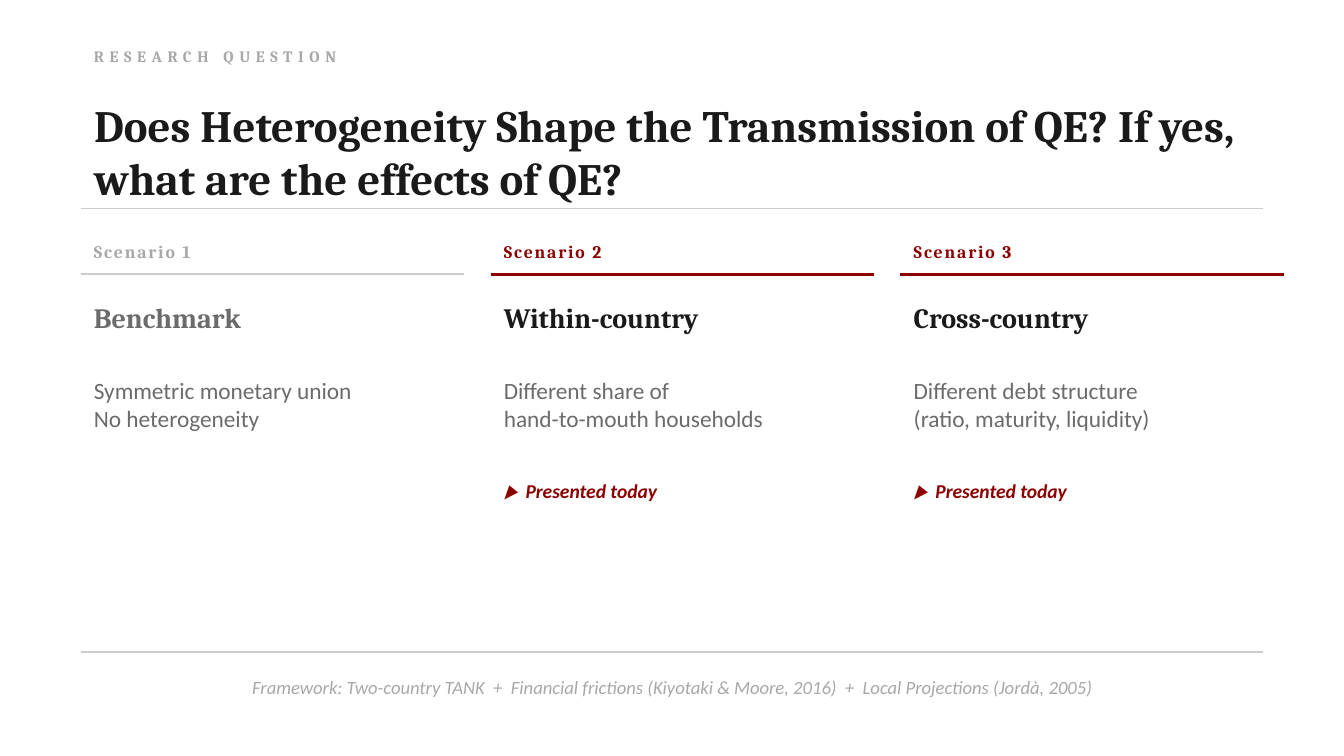
"""Build the research question slide with three scenario columns."""
from dataclasses import dataclass
from typing import Optional

from lxml.etree import SubElement
from pptx import Presentation
from pptx.dml.color import RGBColor
from pptx.enum.shapes import MSO_CONNECTOR as Conn
from pptx.enum.text import MSO_ANCHOR as Anchor, MSO_AUTO_SIZE as AutoSize, PP_ALIGN as Align
from pptx.oxml.ns import qn
from pptx.util import Emu, Pt

PX = 4572
INK = RGBColor(0x1A, 0x1A, 0x1A)
GREY = RGBColor(0x6B, 0x6B, 0x6B)
PALE = RGBColor(0xA8, 0xA8, 0xA8)
RULE = RGBColor(0xCC, 0xCC, 0xCC)
RED = RGBColor(0x8B, 0x00, 0x00)

LEFT, RIGHT = 120, 1880
COL_W, COL_STEP = 570, 610


@dataclass(frozen=True)
class Style:
    """Character format of a text."""
    font: str
    size: float
    color: RGBColor
    bold: bool = False
    italic: bool = False
    spacing: int = 0
    align: Align = Align.LEFT


@dataclass(frozen=True)
class Scenario:
    """One column of the comparison."""
    label: str
    name: str
    lines: tuple[str, ...]
    accent: RGBColor
    name_color: RGBColor
    rule_color: RGBColor
    rule_width: float
    note: Optional[str] = None


SCENARIOS = (
    Scenario("Scenario 1", "Benchmark", ("Symmetric monetary union", "No heterogeneity"),
             PALE, GREY, RULE, 0.75),
    Scenario("Scenario 2", "Within-country", ("Different share of", "hand-to-mouth households"),
             RED, INK, RED, 1.5, "▶  Presented today"),
    Scenario("Scenario 3", "Cross-country", ("Different debt structure", "(ratio, maturity, liquidity)"),
             RED, INK, RED, 1.5, "▶  Presented today"),
)


def px(n: int) -> Emu:
    """Turn px into EMU."""
    return Emu(n * PX)


def fill_text(sp, lines: tuple[str, ...], style: Style) -> None:
    """Write the lines into a shape, one paragraph each."""
    tf = sp.text_frame
    frame = {"word_wrap": True, "auto_size": AutoSize.NONE, "vertical_anchor": Anchor.MIDDLE}
    for key, value in frame.items():
        setattr(tf, key, value)
    font = {"name": style.font, "size": Pt(style.size), "bold": style.bold, "italic": style.italic}
    for i, line in enumerate(lines):
        p = tf.add_paragraph() if i else tf.paragraphs[0]
        p.alignment = style.align
        r = p.add_run()
        r.text = line
        for key, value in font.items():
            setattr(r.font, key, value)
        r.font.color.rgb = style.color
        if style.spacing:
            r._r.get_or_add_rPr().set("spc", str(style.spacing * 100))


def add_text(s, x: int, y: int, w: int, h: int, lines: tuple[str, ...], style: Style) -> None:
    """Add a text box."""
    fill_text(s.shapes.add_textbox(px(x), px(y), px(w), px(h)), lines, style)


def add_rule(s, x1: int, x2: int, y: int, color: RGBColor = RULE, width: float = 0.75) -> None:
    """Add a horizontal line without a shadow."""
    line = s.shapes.add_connector(Conn.STRAIGHT, px(x1), px(y), px(x2), px(y))
    line.line.color.rgb = color
    line.line.width = Pt(width)
    SubElement(line._element.spPr, qn("a:effectLst"))


def add_title(s, text: str) -> None:
    """Place and format the title placeholder."""
    sp = s.shapes.title
    box = {"left": LEFT, "top": 90, "width": RIGHT - LEFT, "height": 270}
    for key, value in box.items():
        setattr(sp, key, px(value))
    fill_text(sp, (text,), Style("Cambria", 24, INK, bold=True))


def add_scenario(s, x: int, sc: Scenario) -> None:
    """Draw one scenario column."""
    add_text(s, x, 344, COL_W, 60, (sc.label,), Style("Cambria", 9.5, sc.accent, bold=True, spacing=1))
    add_rule(s, x, x + COL_W, 408, sc.rule_color, sc.rule_width)
    add_text(s, x, 430, COL_W, 84, (sc.name,), Style("Cambria", 15, sc.name_color, bold=True))
    add_text(s, x, 530, COL_W, 144, sc.lines, Style("Calibri", 12.5, GREY))
    if sc.note:
        add_text(s, x, 700, COL_W, 60, (sc.note,), Style("Calibri", 10.5, sc.accent, bold=True, italic=True))


def main() -> None:
    """Build and save the slide."""
    prs = Presentation()
    prs.slide_width, prs.slide_height = px(2000), px(1125)
    s = prs.slides.add_slide(prs.slide_layouts[5])
    add_text(s, LEFT, 56, 1800, 56, ("RESEARCH QUESTION",), Style("Cambria", 8.5, PALE, bold=True, spacing=3))
    add_title(s, "Does Heterogeneity Shape the Transmission of QE? If yes, what are the effects of QE?")
    add_rule(s, LEFT, RIGHT, 310)
    for i, sc in enumerate(SCENARIOS):
        add_scenario(s, LEFT + i * COL_STEP, sc)
    add_rule(s, LEFT, RIGHT, 970)
    framework = ("Framework: Two-country TANK  +  Financial frictions (Kiyotaki & Moore, 2016)"
                 "  +  Local Projections (Jordà, 2005)")
    add_text(s, LEFT, 992, RIGHT - LEFT, 60, (framework,),
             Style("Calibri", 10, PALE, italic=True, align=Align.CENTER))
    prs.save("out.pptx")


if __name__ == "__main__":
    main()
